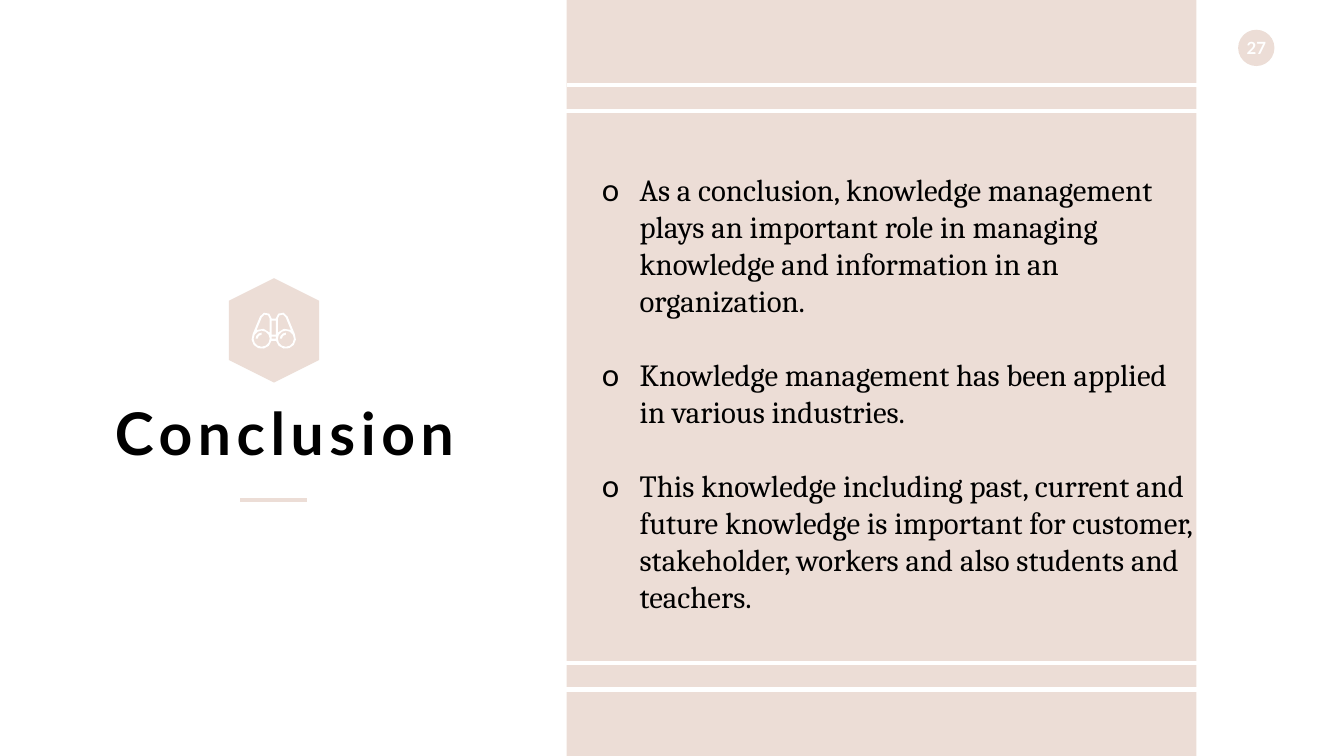
from math import cos, radians, sin

from lxml.etree import SubElement
from pptx import Presentation
from pptx.dml.color import RGBColor
from pptx.enum.shapes import MSO_CONNECTOR, MSO_SHAPE
from pptx.enum.text import MSO_ANCHOR, MSO_AUTO_SIZE, PP_ALIGN
from pptx.oxml.ns import qn
from pptx.util import Pt

PX = 9144  # EMU per px, 100 px to the inch
WIDE, HIGH = 2666, 1500
COLORS = {"blush": "ECDDD6", "white": "FFFFFF", "black": "000000"}
POINTS = [
    "As a conclusion, knowledge management plays an important role in "
    "managing knowledge and information in an organization.",
    "Knowledge management has been applied in various industries.",
    "This knowledge including past, current and future knowledge is important "
    "for customer, stakeholder, workers and also students and teachers.",
]


def color(name):
    return RGBColor.from_string(COLORS[name])


def arc(x, y, r, start, end, steps):
    """Points on a circle from one angle to another, in degrees."""
    turns = [radians(start + (end - start) * i / steps) for i in range(steps + 1)]
    return [(x + r * cos(t), y + r * sin(t)) for t in turns]


def mirror(points):
    return [(-x, y) for x, y in reversed(points)]


def binoculars():
    """Contours around a vertical axis at x = 0; inner ones are holes."""
    half = arc(16, 12, 12, 180, 340, 3) + arc(24, 52, 20, -27, 168, 6)
    ring = arc(24, 52, 16, 0, 330, 11)
    barrel = arc(16, 12, 8, 180, 340, 3) + arc(24, 52, 20, -60, -143, 2)
    bridge = [[(-4, top), (4, top), (4, low), (-4, low)]
              for top, low in ((16, 44), (48, 52))]
    # Both glints face the same way, so the second is shifted, not mirrored
    glints = [arc(x, 52, 12, -90, -180, 3) + arc(x, 52, 8, -180, -90, 2)
              for x in (-24, 24)]
    return [half + mirror(half), ring, mirror(ring), barrel, mirror(barrel),
            *bridge, *glints]


class Deck:
    def __init__(self):
        self.prs = Presentation()
        self.prs.slide_width, self.prs.slide_height = WIDE * PX, HIGH * PX
        self.slide = self.prs.slides.add_slide(self.prs.slide_layouts[6])
        self.shapes = self.slide.shapes

    def paint(self, shape, fill):
        shape.shadow.inherit = False
        shape.fill.solid()
        shape.fill.fore_color.rgb = color(fill)
        shape.line.fill.background()
        return shape

    def shape(self, kind, box, fill, turn=0):
        shape = self.shapes.add_shape(kind, *(n * PX for n in box))
        shape.rotation = turn
        return self.paint(shape, fill)

    def line(self, left, right, y, ink, weight):
        line = self.shapes.add_connector(
            MSO_CONNECTOR.STRAIGHT, left * PX, y * PX, right * PX, y * PX)
        line.line.color.rgb = color(ink)
        line.line.width = Pt(weight)
        SubElement(line._element.spPr, qn("a:effectLst"))

    def icon(self, x, y, loops, fill):
        """Draw closed contours as one shape, shifted to x, y."""
        build = None
        for loop in loops:
            spots = [((x + a) * PX, (y + b) * PX) for a, b in loop]
            if build is None:
                build = self.shapes.build_freeform(*spots[0], scale=1.0)
            else:
                build.move_to(*spots[0])
            build.add_line_segments(spots[1:], close=True)
        self.paint(build.convert_to_shape(), fill)

    def box(self, box):
        frame = self.shapes.add_textbox(*(n * PX for n in box)).text_frame
        frame.word_wrap = True
        frame.auto_size = MSO_AUTO_SIZE.SHAPE_TO_FIT_TEXT
        return frame

    def run(self, para, text, size, face, ink, bold=False, track=0):
        run = para.add_run()
        run.text = text
        run.font.size, run.font.name, run.font.bold = Pt(size), face, bold
        run.font.color.rgb = color(ink)
        if track:
            run._r.get_or_add_rPr().set("spc", str(track * 100))

    def badge(self, box, text):
        frame = self.shape(MSO_SHAPE.OVAL, box, "blush").text_frame
        frame.margin_left = frame.margin_right = 0
        frame.margin_top = frame.margin_bottom = 0
        frame.vertical_anchor = MSO_ANCHOR.MIDDLE
        frame.word_wrap = False
        para = frame.paragraphs[0]
        para.alignment = PP_ALIGN.CENTER
        self.run(para, text, 24, "Lato", "white", bold=True)

    def title(self, box, text):
        para = self.box(box).paragraphs[0]
        para.alignment = PP_ALIGN.CENTER
        self.run(para, text, 84, "Lato", "black", bold=True, track=8)

    def bullets(self, box, items, indent, gap):
        frame = self.box(box)
        for i, item in enumerate(items):
            para = frame.add_paragraph() if i else frame.paragraphs[0]
            if i:
                para.space_before = Pt(gap)
            props = para._p.get_or_add_pPr()
            props.set("marL", str(indent * PX))
            props.set("indent", str(-indent * PX))
            tint = SubElement(props, qn("a:buClr"))
            SubElement(tint, qn("a:srgbClr"), val=COLORS["black"])
            SubElement(props, qn("a:buFont"), typeface="Lato")
            SubElement(props, qn("a:buChar"), char="o")
            self.run(para, item, 44, "Cambria", "black")


def main():
    deck = Deck()
    deck.badge((2456, 59, 72, 72), "27")
    deck.shape(MSO_SHAPE.RECTANGLE, (1124, 0, 1249, HIGH), "blush")
    deck.line(477, 608, 992, "blush", 4.5)
    deck.title((-47, 783, 1223, 151), "Conclusion")
    deck.shape(MSO_SHAPE.HEXAGON, (440, 566, 207, 179), "blush", turn=90)
    deck.icon(543, 620, binoculars(), "white")
    for left, right, y in ((1124, 2508, 169), (1076, 2497, 221),
                           (1024, 2508, 1368), (974, 2458, 1316)):
        deck.line(left, right, y, "white", 6)
    deck.bullets((1184, 334, 1199, 899), POINTS, indent=75, gap=53)
    deck.prs.save("out.pptx")


if __name__ == "__main__":
    main()
